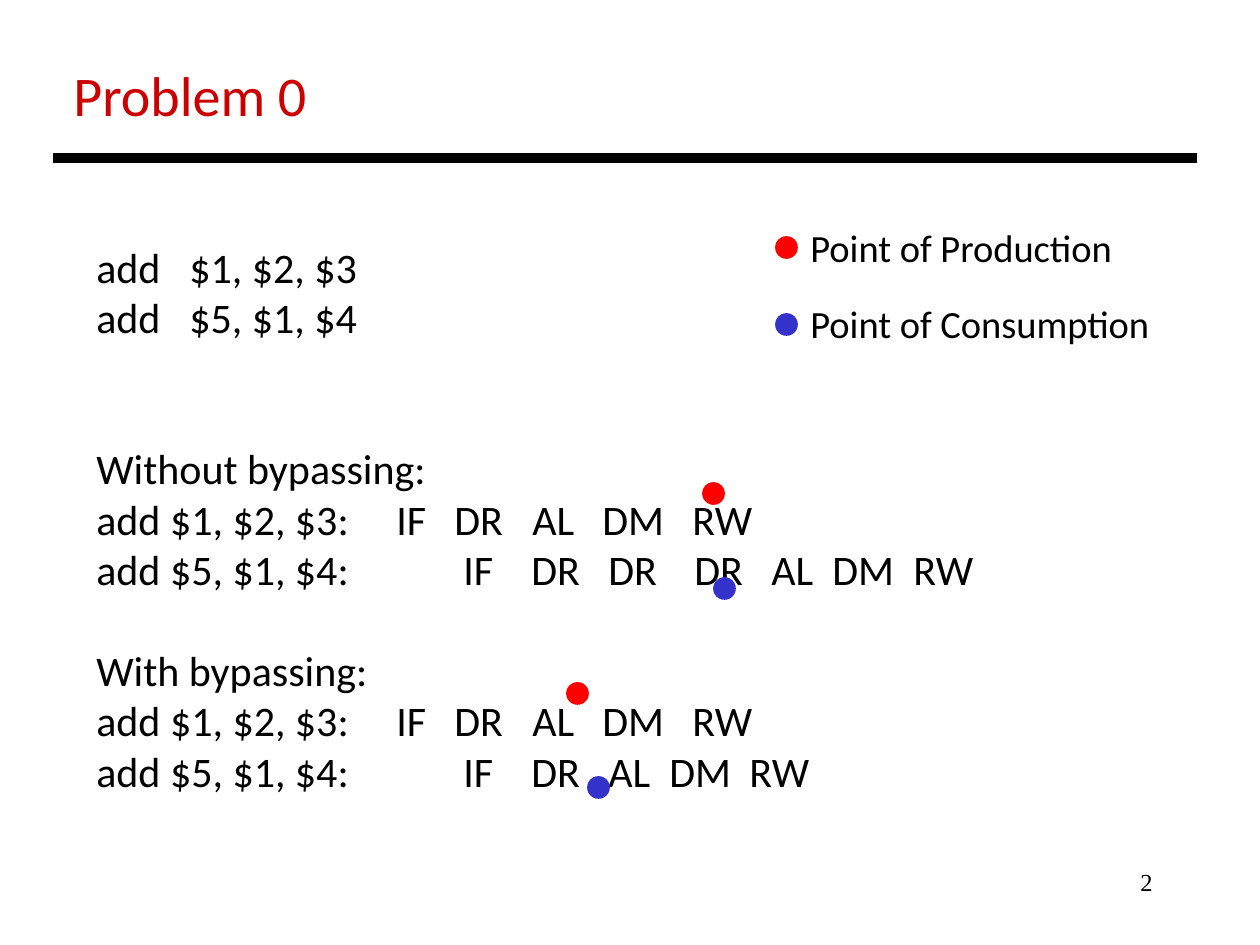
from lxml import etree
from pptx import Presentation
from pptx import util as u
from pptx.dml.color import RGBColor
from pptx.enum import shapes, text
from pptx.oxml.ns import qn

PX = 914400 / 126
COLORS = {"title": "CC0000", "ink": "000000",
          "production": "FF0000", "consumption": "3333CC"}
DOT = 21
LINE_PT = 28.8

# Tab stops in px from the text edge
CODE_TABS = [93]
FIRST_TABS = [300, 358, 436, 506, 596]
STALLED_TABS = [367, 435, 512, 598, 675, 736, 817]
BYPASSED_TABS = [367, 435, 512, 573, 653]

# Text, tab stops, lines of space before
LISTING = [
    ("add\t$1, $2, $3", CODE_TABS, 0),
    ("add\t$5, $1, $4", CODE_TABS, 0),
    ("Without bypassing:", [], 2),
    ("add $1, $2, $3:\tIF\tDR\tAL\tDM\tRW", FIRST_TABS, 0),
    ("add $5, $1, $4:\tIF\tDR\tDR\tDR\tAL\tDM\tRW", STALLED_TABS, 0),
    ("With bypassing:", [], 1),
    ("add $1, $2, $3:\tIF\tDR\tAL\tDM\tRW", FIRST_TABS, 0),
    ("add $5, $1, $4:\tIF\tDR\tAL\tDM\tRW", BYPASSED_TABS, 0),
]

# Legend label, colour, dot top, label top, label width
LEGEND = [
    ("Point of Production", "production", 237, 218, 330),
    ("Point of Consumption", "consumption", 314, 294, 368),
]

# Left and top of the dots on the pipeline stages
STAGE_DOTS = [
    ("production", 567, 683), ("production", 703, 483),
    ("consumption", 714, 578), ("consumption", 588, 777),
]


def px(n):
    return u.Emu(round(n * PX))


def rgb(name):
    return RGBColor.from_string(COLORS[name])


def add_box(s, x, y, w, h, wrap=False):
    tf = s.shapes.add_textbox(px(x), px(y), px(w), px(h)).text_frame
    tf.word_wrap = wrap
    return tf


def add_run(p, words, size, color="ink", font="Calibri"):
    r = p.add_run()
    r.text = words
    r.font.size = u.Pt(size)
    r.font.name = font
    r.font.color.rgb = rgb(color)


def add_dot(s, color, x, y):
    sp = s.shapes.add_shape(shapes.MSO_SHAPE.OVAL, px(x), px(y), px(DOT), px(DOT))
    sp.shadow.inherit = False
    sp.fill.solid()
    sp.fill.fore_color.rgb = rgb(color)
    sp.line.color.rgb = rgb(color)
    sp.line.width = u.Pt(1)


def add_rule(s, x1, x2, y):
    line = s.shapes.add_connector(shapes.MSO_CONNECTOR.STRAIGHT,
                                  px(x1), px(y), px(x2), px(y))
    line.line.color.rgb = rgb("ink")
    line.line.width = u.Pt(6)
    etree.SubElement(line._element.spPr, qn("a:effectLst"))


def set_tabs(p, stops):
    tabs = etree.SubElement(p._p.get_or_add_pPr(), qn("a:tabLst"))
    for stop in stops:
        etree.SubElement(tabs, qn("a:tab"), pos=str(px(stop)), algn="l")


def add_listing(s):
    tf = add_box(s, 84, 231, 907, 624, wrap=True)
    tf.margin_top = px(10)
    for i, (words, stops, gap) in enumerate(LISTING):
        p = tf.paragraphs[0] if i == 0 else tf.add_paragraph()
        p.line_spacing = u.Pt(LINE_PT)
        p.space_before = u.Pt(gap * LINE_PT)
        if stops:
            set_tabs(p, stops)
        add_run(p, words, 24)


def main():
    prs = Presentation()
    prs.slide_width, prs.slide_height = px(1260), px(945)
    s = prs.slides.add_slide(prs.slide_layouts[6])

    # Slide number
    p = add_box(s, 903, 861, 262, 63, wrap=True).paragraphs[0]
    p.alignment = text.PP_ALIGN.RIGHT
    add_run(p, "2", 14, font="Times New Roman")

    # Title and rule
    add_run(add_box(s, 61, 54, 261, 81).paragraphs[0], "Problem 0", 32, "title")
    add_rule(s, 53, 1197, 158)

    # Code and pipeline stages
    add_listing(s)

    # Legend
    for label, color, dot_y, label_y, width in LEGEND:
        add_dot(s, color, 776, dot_y)
        add_run(add_box(s, 798, label_y, width, 59).paragraphs[0], label, 22)

    # Points of production and consumption
    for color, x, y in STAGE_DOTS:
        add_dot(s, color, x, y)

    prs.save("out.pptx")


if __name__ == "__main__":
    main()
